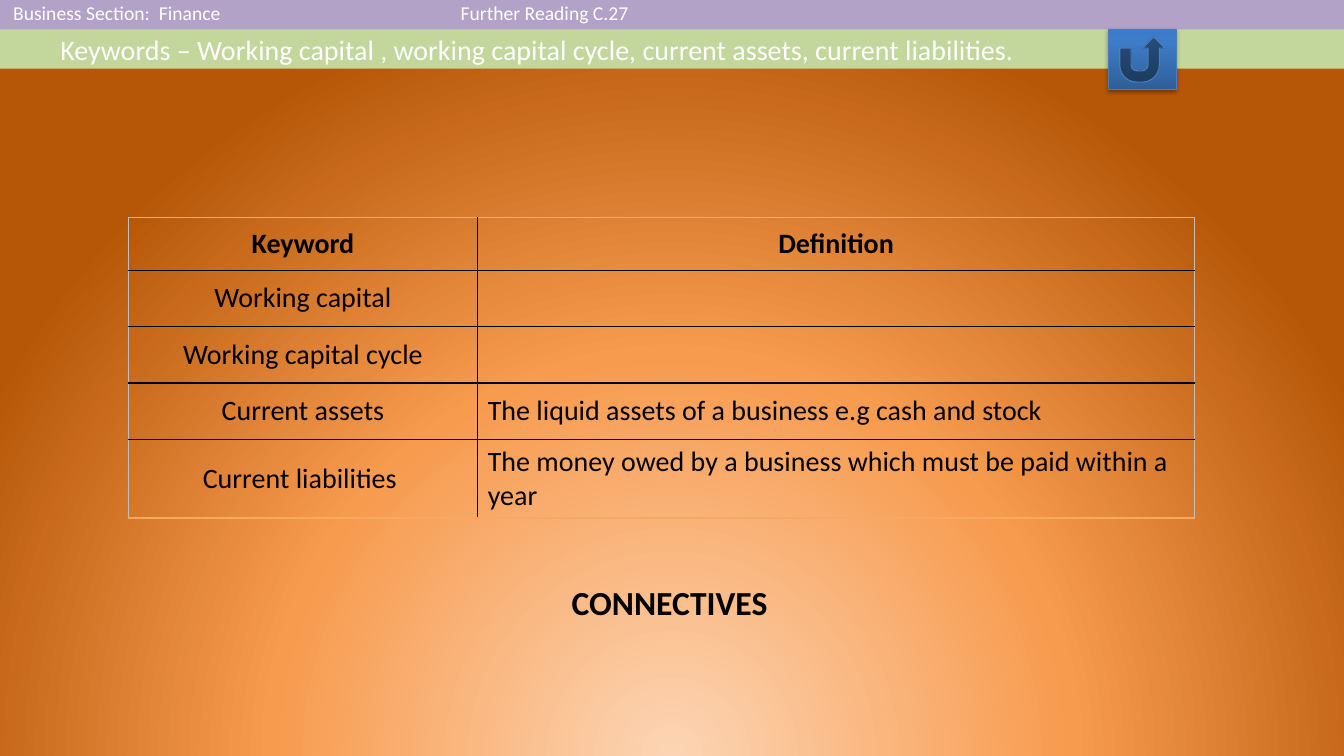
import lxml.etree
import pptx
import pptx.dml.color
import pptx.enum.shapes
import pptx.enum.text
import pptx.oxml
import pptx.oxml.ns
import pptx.util

Cm = pptx.util.Cm
Pt = pptx.util.Pt
RGBColor = pptx.dml.color.RGBColor
MSO_SHAPE = pptx.enum.shapes.MSO_SHAPE
PP_ALIGN = pptx.enum.text.PP_ALIGN
MSO_ANCHOR = pptx.enum.text.MSO_ANCHOR
qn = pptx.oxml.ns.qn

BLACK = RGBColor(0x00, 0x00, 0x00)
WHITE = RGBColor(0xFF, 0xFF, 0xFF)
PURPLE = RGBColor(0xB3, 0xA2, 0xC7)
GREEN = RGBColor(0xC3, 0xD6, 0x9B)
BUTTON_LINE = RGBColor(0x4B, 0x7E, 0xBC)
SIDE_EDGE = RGBColor(0xBF, 0xBF, 0xBF)
TOP_EDGE = RGBColor(0xF7, 0xA8, 0x62)
BACKGROUND_STOPS = [(0, RGBColor(0xFC, 0xD5, 0xB5)), (52, RGBColor(0xF7, 0x9B, 0x4F)),
                    (100, RGBColor(0xB6, 0x57, 0x08))]
BUTTON_STOPS = [(0, RGBColor(0x2F, 0x5F, 0x99)), (80, RGBColor(0x3D, 0x7C, 0xC7)),
                (100, RGBColor(0x3A, 0x7C, 0xCB))]
NO_TABLE_STYLE = "{2D5ABB26-0587-4C30-8999-92F81FD0307C}"
NAMESPACE = 'xmlns:a="http://schemas.openxmlformats.org/drawingml/2006/main"'


def write_text(frame, text, size=20, color=BLACK, bold=False, align=PP_ALIGN.LEFT):
    paragraph = frame.paragraphs[0]
    paragraph.alignment = align
    run = paragraph.add_run()
    run.text = text
    run.font.name = "Calibri"
    run.font.size = Pt(size)
    run.font.bold = bold
    run.font.color.rgb = color


def apply_gradient(fill, parent, stops, direction):
    """Swap the solid fill of parent for a gradient with the given direction XML."""
    fill.solid()
    stop_xml = "".join(f'<a:gs pos="{position * 1000}"><a:srgbClr val="{color}"/></a:gs>'
                       for position, color in stops)
    gradient = pptx.oxml.parse_xml(
        f'<a:gradFill {NAMESPACE} rotWithShape="1"><a:gsLst>{stop_xml}</a:gsLst>{direction}</a:gradFill>')
    parent.replace(parent.find(qn("a:solidFill")), gradient)


presentation = pptx.Presentation()
presentation.slide_width = Cm(33.87)
presentation.slide_height = Cm(19.05)
slide = presentation.slides.add_slide(presentation.slide_layouts[6])
shapes = slide.shapes

background_fill = slide.background.fill
background_fill.solid()
apply_gradient(background_fill, slide.element.find(".//" + qn("p:bgPr")), BACKGROUND_STOPS,
               '<a:path path="circle"><a:fillToRect l="50000" t="130000" r="50000" b="-30000"/></a:path>')

# Section header strip
header_table = shapes.add_table(2, 3, 0, Cm(-0.08), Cm(33.87), Cm(1.58)).table
for column, width in zip(header_table.columns, (11.28, 5.64, 16.95)):
    column.width = Cm(width)
for cell in header_table.iter_cells():
    cell.fill.solid()
    cell.fill.fore_color.rgb = PURPLE
    cell.margin_top = cell.margin_bottom = 0
for index, text in enumerate(("Business Section:  Finance", "Further Reading C.27")):
    cell = header_table.cell(0, index)
    cell.vertical_anchor = MSO_ANCHOR.MIDDLE
    cell.margin_left = cell.margin_right = Cm(0.33)
    cell.margin_top = cell.margin_bottom = Cm(0.13)
    write_text(cell.text_frame, text, size=14, color=WHITE)

# Keywords band
band = shapes.add_shape(MSO_SHAPE.RECTANGLE, 0, Cm(0.74), Cm(33.87), Cm(0.99))
band.shadow.inherit = False
band.fill.solid()
band.fill.fore_color.rgb = GREEN
band.line.fill.background()
band.text_frame.word_wrap = True
band.text_frame.margin_left = Cm(1.52)
band.text_frame.vertical_anchor = MSO_ANCHOR.MIDDLE
write_text(band.text_frame,
           "Keywords – Working capital , working capital cycle, current assets, current liabilities.",
           color=WHITE)

# Keyword definitions
definitions = [
    ("Keyword", "Definition"),
    ("Working capital", ""),
    ("Working capital cycle", ""),
    ("Current assets", "The liquid assets of a business e.g cash and stock"),
    ("Current liabilities ", "The money owed by a business which must be paid within a year"),
]
keyword_table = shapes.add_table(5, 2, Cm(3.23), Cm(5.49), Cm(26.87), Cm(7.55)).table
for column, width in zip(keyword_table.columns, (8.81, 18.06)):
    column.width = Cm(width)
for row, height in zip(keyword_table.rows, (1.32, 1.42, 1.42, 1.42, 1.97)):
    row.height = Cm(height)
for row_index, entry in enumerate(definitions):
    for column_index, text in enumerate(entry):
        cell = keyword_table.cell(row_index, column_index)
        cell.vertical_anchor = MSO_ANCHOR.MIDDLE
        is_header = row_index == 0
        if text:
            centred = is_header or column_index == 0
            write_text(cell.text_frame, text, bold=is_header,
                       align=PP_ALIGN.CENTER if centred else PP_ALIGN.LEFT)
        cell.fill.background()
        edges = [("L", SIDE_EDGE if column_index == 0 else BLACK),
                 ("R", SIDE_EDGE if column_index == 1 else BLACK),
                 ("T", TOP_EDGE if is_header else BLACK),
                 ("B", TOP_EDGE if row_index == len(definitions) - 1 else BLACK)]
        properties = cell._tc.get_or_add_tcPr()
        for position, (side, color) in enumerate(edges):
            properties.insert(position, pptx.oxml.parse_xml(
                f'<a:ln{side} {NAMESPACE} w="12700"><a:solidFill><a:srgbClr val="{color}"/>'
                f'</a:solidFill></a:ln{side}>'))

for table in (header_table, keyword_table):
    table.horz_banding = False
    table._tbl.tblPr.find(qn("a:tableStyleId")).text = NO_TABLE_STYLE

# Connectives heading
heading = shapes.add_textbox(Cm(14.12), Cm(14.53), Cm(5.51), Cm(1.27))
heading.text_frame.word_wrap = False
write_text(heading.text_frame, "CONNECTIVES", size=24, bold=True, align=PP_ALIGN.CENTER)

# Return button
button = shapes.add_shape(MSO_SHAPE.ACTION_BUTTON_RETURN, Cm(27.94), Cm(0.74), Cm(1.7), Cm(1.52))
button.shadow.inherit = False
button.line.color.rgb = BUTTON_LINE
button.line.width = Pt(0.75)
button_properties = button.element.spPr
apply_gradient(button.fill, button_properties, BUTTON_STOPS, '<a:lin ang="16200000" scaled="0"/>')
shadow = lxml.etree.SubElement(button_properties.find(qn("a:effectLst")), qn("a:outerShdw"),
                               blurRad=str(Pt(3.1)), dist=str(Pt(1.8)), dir="5400000", rotWithShape="0")
shadow_color = lxml.etree.SubElement(shadow, qn("a:srgbClr"), val=str(BLACK))
lxml.etree.SubElement(shadow_color, qn("a:alpha"), val="35000")

presentation.save("out.pptx")
